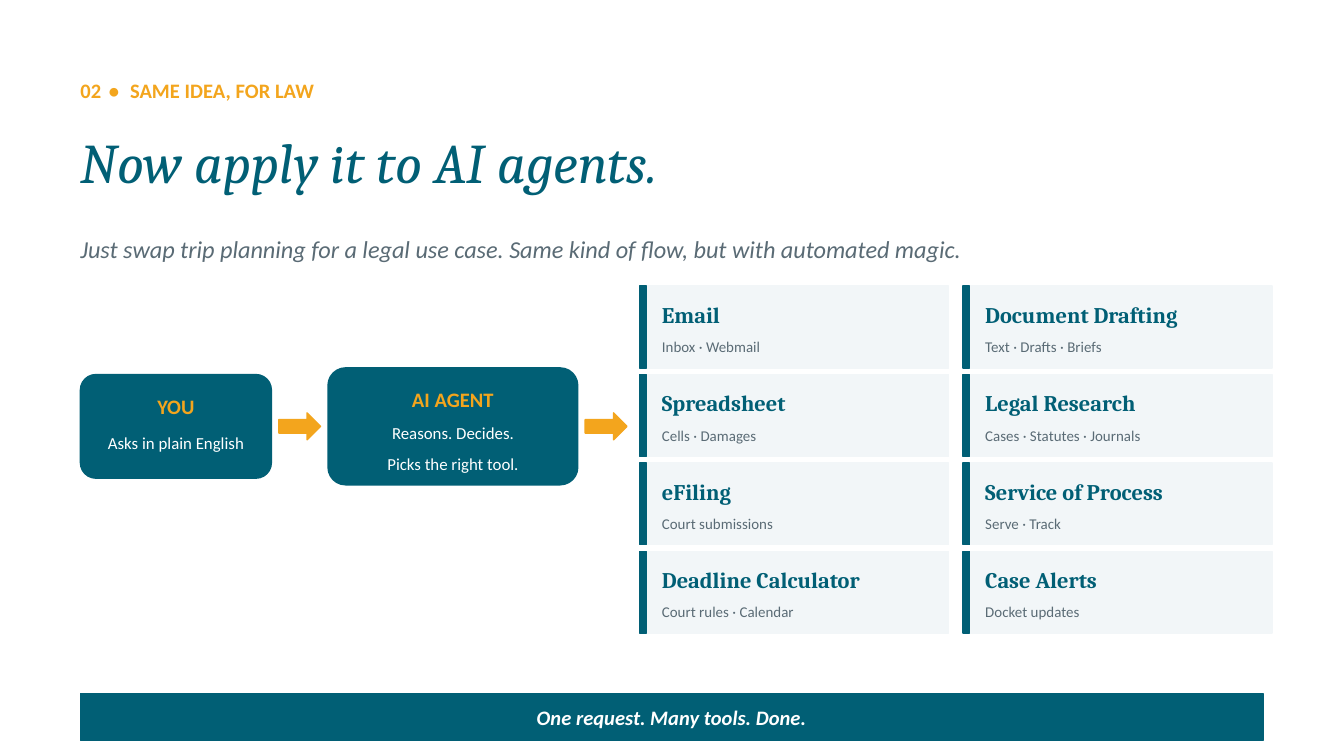
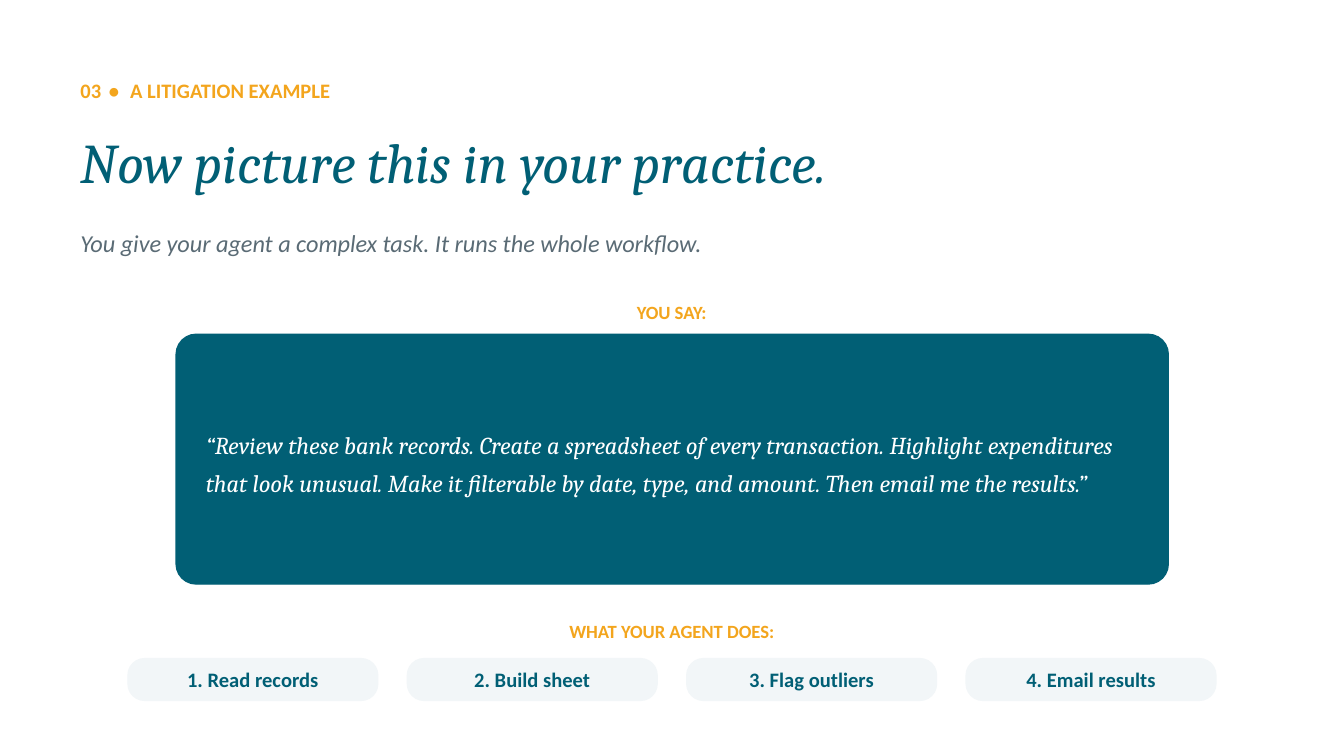
from dataclasses import dataclass

from pptx import Presentation
from pptx.dml.color import RGBColor
from pptx.enum.shapes import MSO_SHAPE as Shape
from pptx.enum.text import MSO_ANCHOR as Anchor, MSO_AUTO_SIZE as AutoSize, PP_ALIGN as Align
from pptx.util import Cm, Pt


@dataclass(frozen=True)
class Style:
    size: float
    font: str
    color: str
    bold: bool = False
    italic: bool = False


class Theme:
    teal = "015F75"
    amber = "F3A51D"
    gray = "5A6B75"
    pale = "F2F6F8"
    white = "FFFFFF"
    sans = "Calibri"
    serif = "Cambria"
    kicker = Style(11, sans, amber, bold=True)
    title = Style(30, serif, teal, italic=True)
    subtitle = Style(13, sans, gray, italic=True)
    box_line = Style(9, sans, white)
    card_title = Style(12, serif, teal, bold=True)
    card_detail = Style(8, sans, gray)
    banner = Style(11, sans, white, bold=True, italic=True)
    label = Style(10, sans, amber, bold=True)
    quote = Style(13, serif, white, italic=True)
    chip = Style(11, sans, teal, bold=True)


SLIDE_WIDTH, SLIDE_HEIGHT = 25.4, 14.29
MARGIN = 1.52
CONTENT_WIDTH = 22.35

AGENTS = {
    "number": "02",
    "kicker": "SAME IDEA, FOR LAW",
    "title": "Now apply it to AI agents.",
    "subtitle": "Just swap trip planning for a legal use case. "
                "Same kind of flow, but with automated magic.",
    "subtitle_height": 1.27,
    "flow": [
        {"heading": "YOU", "lines": ["Asks in plain English"],
         "left": MARGIN, "width": 3.61, "height": 1.96, "line_height": 0.79},
        {"heading": "AI AGENT", "lines": ["Reasons. Decides.", "Picks the right tool."],
         "left": 6.2, "width": 4.72, "height": 2.21, "line_height": 0.66},
    ],
    "tools": [
        ("Email", "Inbox · Webmail"),
        ("Document Drafting", "Text · Drafts · Briefs"),
        ("Spreadsheet", "Cells · Damages"),
        ("Legal Research", "Cases · Statutes · Journals"),
        ("eFiling", "Court submissions"),
        ("Service of Process", "Serve · Track"),
        ("Deadline Calculator", "Court rules · Calendar"),
        ("Case Alerts", "Docket updates"),
    ],
    "banner": "One request. Many tools. Done.",
}

PRACTICE = {
    "number": "03",
    "kicker": "A LITIGATION EXAMPLE",
    "title": "Now picture this in your practice.",
    "subtitle": "You give your agent a complex task. It runs the whole workflow.",
    "subtitle_height": 1.07,
    "prompt_label": "YOU SAY:",
    "prompt": "“Review these bank records. Create a spreadsheet of every transaction. "
              "Highlight expenditures that look unusual. Make it filterable by date, "
              "type, and amount. Then email me the results.”",
    "steps_label": "WHAT YOUR AGENT DOES:",
    "steps": ["1. Read records", "2. Build sheet", "3. Flag outliers", "4. Email results"],
}


def color(value):
    return RGBColor.from_string(value)


def add_run(paragraph, text, style):
    run = paragraph.add_run()
    run.text = text
    run.font.size = Pt(style.size)
    run.font.name = style.font
    run.font.color.rgb = color(style.color)
    run.font.bold = style.bold
    run.font.italic = style.italic
    return run


def prepare_frame(frame, align=Align.LEFT, anchor=Anchor.MIDDLE, inset=0):
    frame.word_wrap = True
    frame.auto_size = AutoSize.NONE
    frame.vertical_anchor = anchor
    frame.margin_left = frame.margin_right = Cm(inset)
    frame.margin_top = frame.margin_bottom = Cm(inset / 2)
    paragraph = frame.paragraphs[0]
    paragraph.alignment = align
    return paragraph


def add_text(slide, box, text, style, align=Align.LEFT, anchor=Anchor.MIDDLE):
    shape = slide.shapes.add_textbox(*map(Cm, box))
    paragraph = prepare_frame(shape.text_frame, align, anchor)
    if text:
        add_run(paragraph, text, style)
    return paragraph


def add_block(slide, kind, box, fill, rounding=None):
    shape = slide.shapes.add_shape(kind, *map(Cm, box))
    shape.shadow.inherit = False
    shape.fill.solid()
    shape.fill.fore_color.rgb = color(fill)
    shape.line.color.rgb = color(fill)
    shape.line.width = Pt(0.75)
    if rounding is not None:
        shape.adjustments[0] = rounding
    return shape


def add_base_slide(presentation, content):
    slide = presentation.slides.add_slide(presentation.slide_layouts[5])
    slide.background.fill.solid()
    slide.background.fill.fore_color.rgb = color(Theme.white)

    kicker = add_text(slide, (MARGIN, 1.27, 22.86, 0.89), "", Theme.kicker)
    add_run(kicker, content["number"], Theme.kicker)
    separator = add_run(kicker, " • ", Theme.kicker)
    separator.font._element.set("spc", "165")
    add_run(kicker, content["kicker"], Theme.kicker)

    title = slide.shapes.title
    title.left, title.top, title.width, title.height = map(Cm, (MARGIN, 2.16, 22.86, 1.78))
    add_run(prepare_frame(title.text_frame), content["title"], Theme.title)

    add_text(slide, (MARGIN, 4.06, CONTENT_WIDTH, content["subtitle_height"]),
             content["subtitle"], Theme.subtitle)
    return slide


def add_flow(slide, boxes):
    middle = 8.06
    arrow_width, arrow_height = 0.79, 0.51
    for box in boxes:
        left, width, height = box["left"], box["width"], box["height"]
        top = middle - height / 2
        add_block(slide, Shape.ROUNDED_RECTANGLE, (left, top, width, height), Theme.teal, 0.15)
        add_text(slide, (left, top + 0.2, width, 0.79), box["heading"],
                 Theme.kicker, Align.CENTER)
        for index, line in enumerate(box["lines"]):
            line_top = top + 0.89 + index * 0.59
            add_text(slide, (left, line_top, width, box["line_height"]), line,
                     Theme.box_line, Align.CENTER)
        add_block(slide, Shape.RIGHT_ARROW,
                  (left + width + 0.14, middle - arrow_height / 2, arrow_width, arrow_height),
                  Theme.amber)


def add_tool_cards(slide, tools):
    columns = 2
    width, height = 5.84, 1.55
    for index, (name, detail) in enumerate(tools):
        row, column = divmod(index, columns)
        left = 12.09 + column * 6.11
        top = 5.41 + row * 1.67
        add_block(slide, Shape.RECTANGLE, (left, top, width, height), Theme.pale)
        add_block(slide, Shape.RECTANGLE, (left, top, 0.13, height), Theme.teal)
        add_text(slide, (left + 0.42, top + 0.28, 5.28, 0.66), name,
                 Theme.card_title, anchor=Anchor.TOP)
        add_text(slide, (left + 0.42, top + 0.98, 5.28, 0.61), detail,
                 Theme.card_detail, anchor=Anchor.TOP)


def add_banner(slide, text):
    box = (MARGIN, 13.11, CONTENT_WIDTH, 0.89)
    add_block(slide, Shape.RECTANGLE, box, Theme.teal)
    add_text(slide, box, text, Theme.banner, Align.CENTER)


def add_label(slide, top, text):
    add_text(slide, (MARGIN, top, CONTENT_WIDTH, 0.79), text, Theme.label, Align.CENTER)


def add_prompt(slide, text):
    left, top, width, height = 3.33, 6.32, 18.75, 4.72
    pad_x, pad_y = 0.56, 0.28
    add_block(slide, Shape.ROUNDED_RECTANGLE, (left, top, width, height), Theme.teal, 0.08)
    paragraph = add_text(
        slide, (left + pad_x, top + pad_y, width - 2 * pad_x, height - 2 * pad_y),
        text, Theme.quote)
    paragraph.line_spacing = 1.3


def add_steps(slide, steps):
    width, height, gap = 4.72, 0.79, 0.56
    start = (SLIDE_WIDTH - len(steps) * width - (len(steps) - 1) * gap) / 2
    for index, step in enumerate(steps):
        box = (start + index * (width + gap), 12.45, width, height)
        chip = add_block(slide, Shape.ROUNDED_RECTANGLE, box, Theme.pale, 0.4)
        paragraph = prepare_frame(chip.text_frame, Align.CENTER, inset=0.25)
        add_run(paragraph, step, Theme.chip)


def main():
    presentation = Presentation()
    presentation.slide_width = Cm(SLIDE_WIDTH)
    presentation.slide_height = Cm(SLIDE_HEIGHT)

    slide = add_base_slide(presentation, AGENTS)
    add_flow(slide, AGENTS["flow"])
    add_tool_cards(slide, AGENTS["tools"])
    add_banner(slide, AGENTS["banner"])

    slide = add_base_slide(presentation, PRACTICE)
    add_label(slide, 5.51, PRACTICE["prompt_label"])
    add_prompt(slide, PRACTICE["prompt"])
    add_label(slide, 11.53, PRACTICE["steps_label"])
    add_steps(slide, PRACTICE["steps"])

    presentation.save("out.pptx")


if __name__ == "__main__":
    main()
